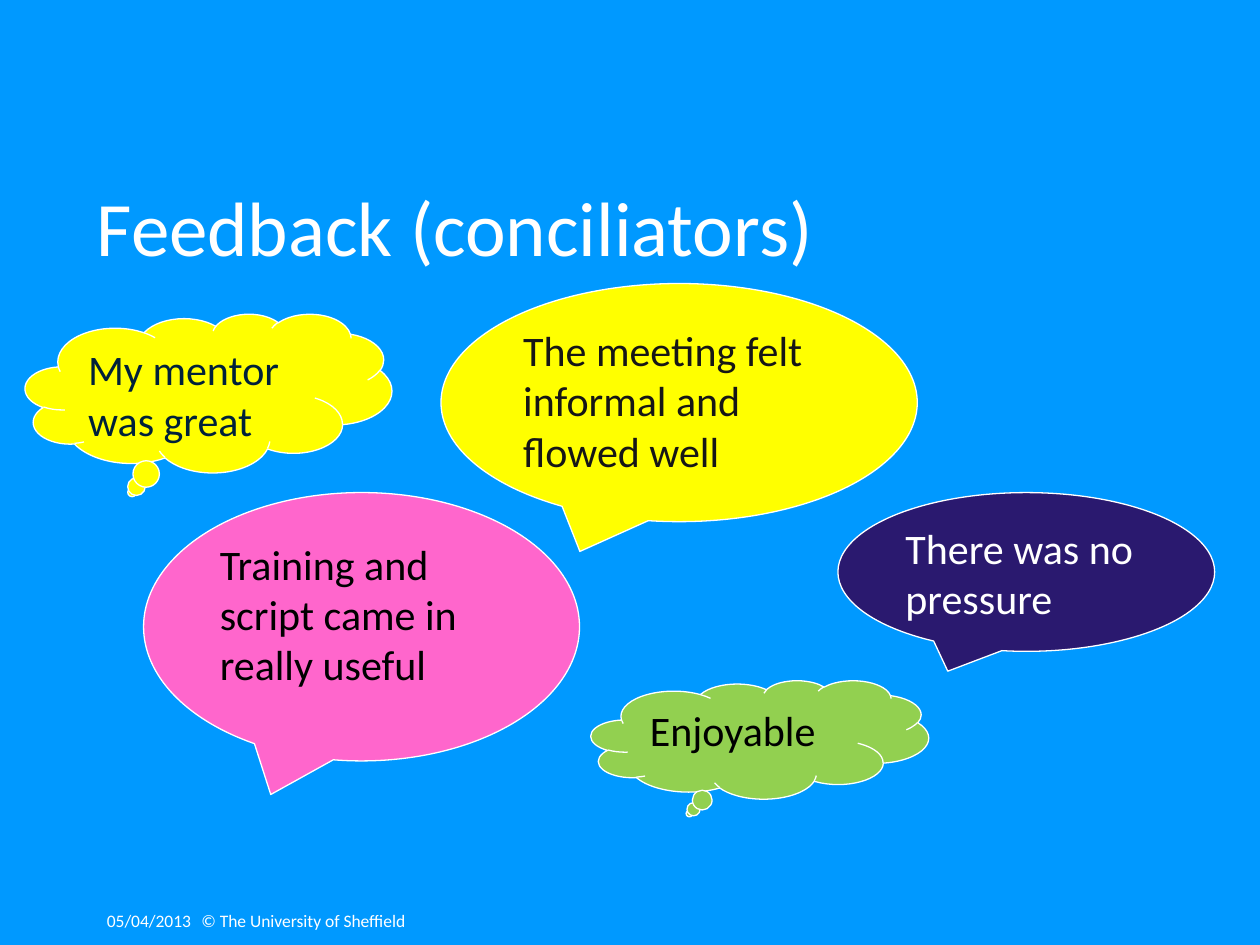
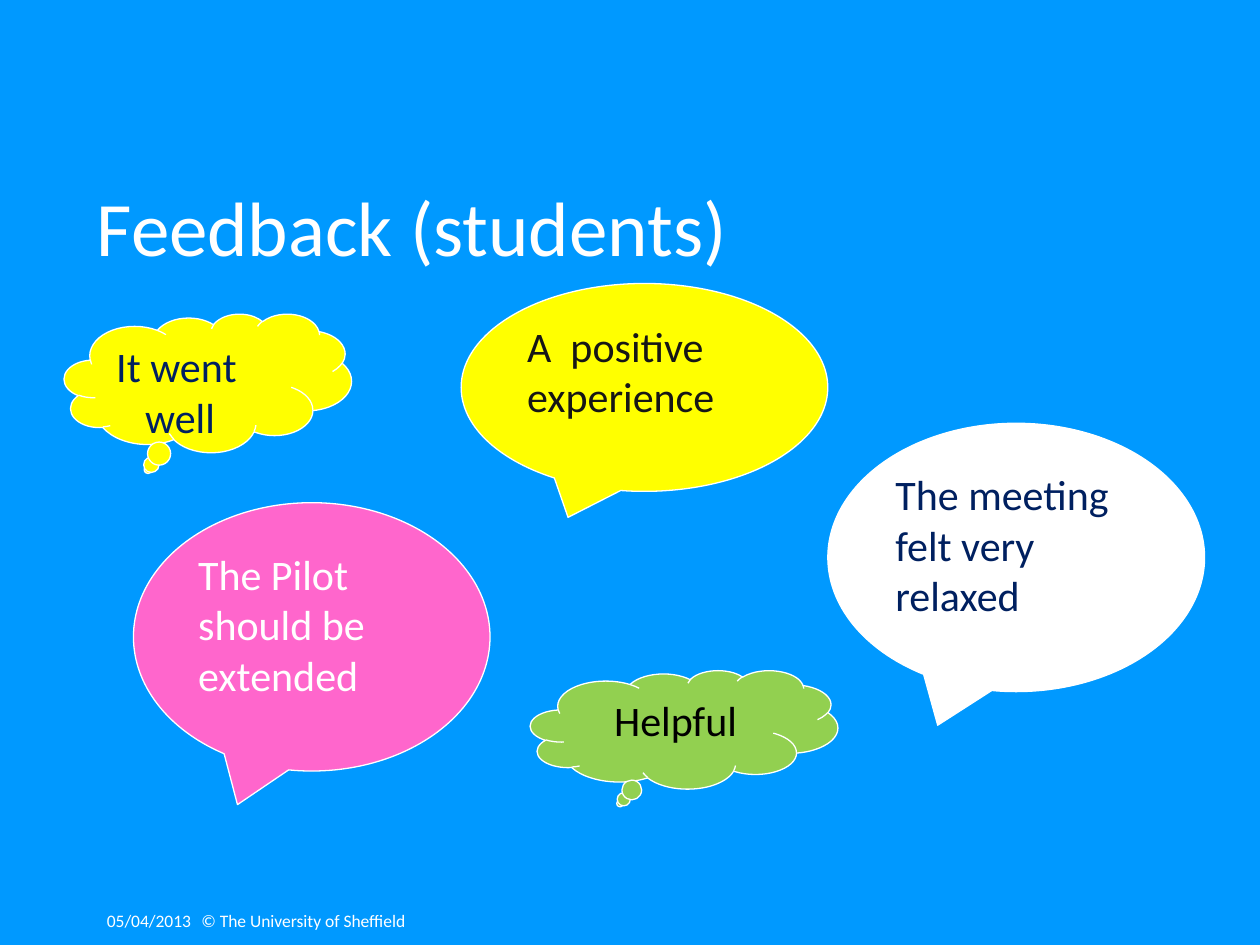
from pptx import Presentation
from pptx.dml.color import RGBColor
from pptx.enum.shapes import MSO_SHAPE
from pptx.enum.text import MSO_ANCHOR, PP_ALIGN
from pptx.util import Inches, Pt

SPEECH = MSO_SHAPE.OVAL_CALLOUT
CLOUD = MSO_SHAPE.CLOUD_CALLOUT
TOP = MSO_ANCHOR.TOP
LEFT = PP_ALIGN.LEFT

FONT = "Calibri"
COLORS = {
    "sky": "0099FF",
    "white": "FFFFFF",
    "black": "000000",
    "coal": "161616",
    "ink": "00213A",
    "navy": "002060",
    "violet": "2A196F",
    "pink": "FF66CC",
    "yellow": "FFFF00",
    "green": "92D050",
}
INDENT = 0.23

# Each quote: shape, box, fill, text colour, list of (line, indent)
STAFF = [
    (SPEECH, (1.14, 3.91, 3.46, 2.13), "pink", "black",
     [("Training and script came in really useful", 0)]),
    (SPEECH, (3.5, 2.25, 3.78, 1.89), "yellow", "coal",
     [("The meeting felt informal and flowed well", 0)]),
    (SPEECH, (6.65, 3.91, 2.99, 1.26), "violet", "white",
     [("There was no pressure", 0)]),
    (CLOUD, (0.2, 2.49, 2.91, 1.26), "yellow", "ink",
     [("My mentor was great", 0)]),
    (CLOUD, (4.69, 5.4, 2.68, 0.94), "green", "black",
     [("Enjoyable", 0)]),
]
STUDENTS = [
    (SPEECH, (1.06, 3.99, 2.83, 2.13), "pink", "white",
     [("The Pilot should be extended", 0)]),
    (SPEECH, (3.66, 2.25, 2.91, 1.65), "yellow", "coal",
     [("A  positive experience", 0)]),
    (SPEECH, (6.57, 3.36, 2.99, 2.13), "white", "navy",
     [("The meeting felt very relaxed", 0)]),
    (CLOUD, (0.51, 2.49, 2.28, 1.1), "yellow", "navy",
     [("It went", 0), ("well", INDENT)]),
    (CLOUD, (4.21, 5.32, 2.44, 0.94), "green", "black",
     [("Helpful", INDENT)]),
]


def color(name):
    return RGBColor.from_string(COLORS[name])


def write(shape, lines, size, ink, spacing=None):
    """Fill a shape with top-left text, one paragraph per (line, indent)."""
    frame = shape.text_frame
    frame.word_wrap = True
    frame.vertical_anchor = TOP
    for i, (line, indent) in enumerate(lines):
        para = frame.add_paragraph() if i else frame.paragraphs[0]
        para.alignment = LEFT
        if spacing:
            para.line_spacing = spacing
        if indent:
            props = para._p.get_or_add_pPr()
            props.set("marL", str(Inches(indent)))
            props.set("indent", "0")
        run = para.add_run()
        run.text = line
        run.font.name = FONT
        run.font.size = Pt(size)
        run.font.color.rgb = color(ink)


def add_label(slide, box, text, size, spacing=None):
    label = slide.shapes.add_textbox(*map(Inches, box))
    write(label, [(text, 0)], size, "white", spacing)


def add_quote(slide, kind, box, fill, ink, lines):
    quote = slide.shapes.add_shape(kind, *map(Inches, box))
    quote.shadow.inherit = False
    quote.fill.solid()
    quote.fill.fore_color.rgb = color(fill)
    quote.line.color.rgb = color("white")
    quote.line.width = Pt(0.75)
    write(quote, lines, 24, ink)


def add_page(prs, title, quotes):
    slide = prs.slides.add_slide(prs.slide_layouts[6])
    slide.background.fill.solid()
    slide.background.fill.fore_color.rgb = color("sky")
    add_label(slide, (0.67, 1.5, 9, 0.83), title, 44, 0.83)
    add_label(slide, (0.75, 7.17, 1, 0.33), "05/04/2013", 10)
    add_label(slide, (1.5, 7.17, 5.67, 0.33), "© The University of Sheffield", 10)
    for quote in quotes:
        add_quote(slide, *quote)


def main():
    prs = Presentation()
    prs.slide_width = Inches(10)
    prs.slide_height = Inches(7.5)
    add_page(prs, "Feedback (conciliators)", STAFF)
    add_page(prs, "Feedback (students)", STUDENTS)
    prs.save("out.pptx")


if __name__ == "__main__":
    main()
